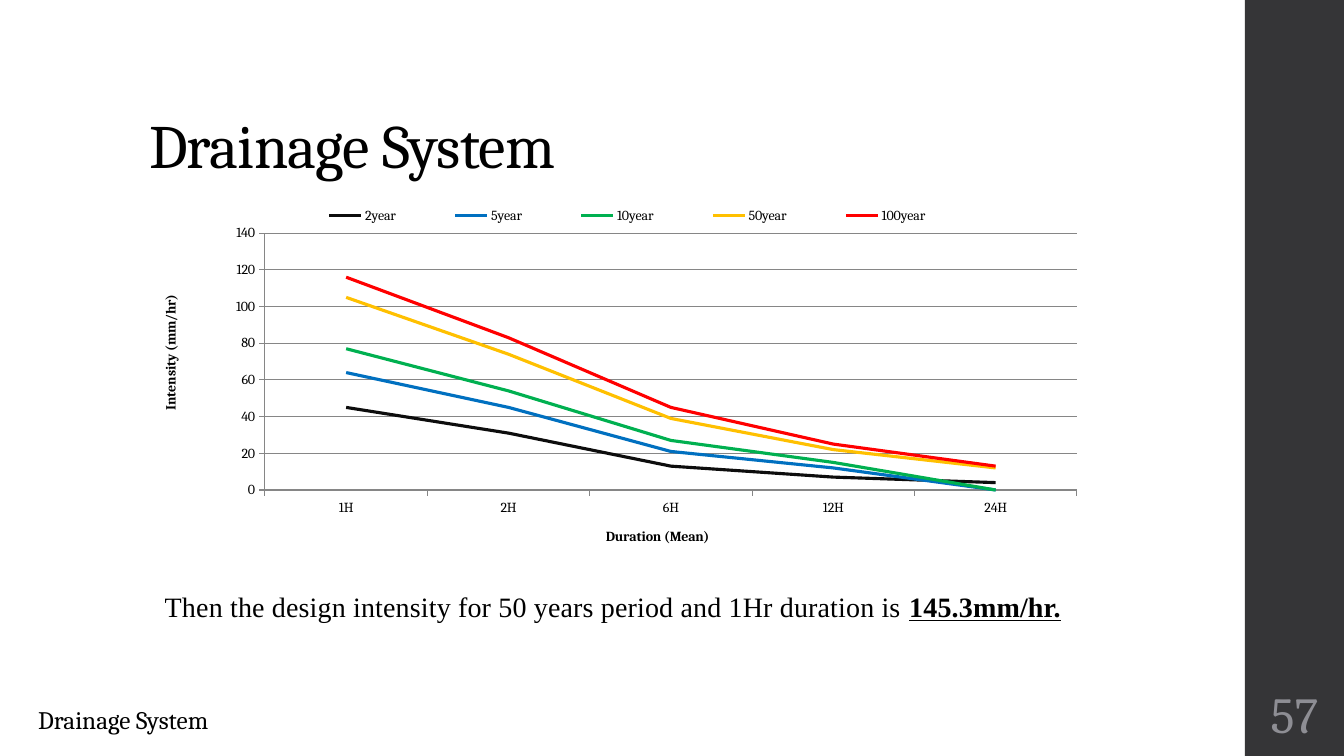
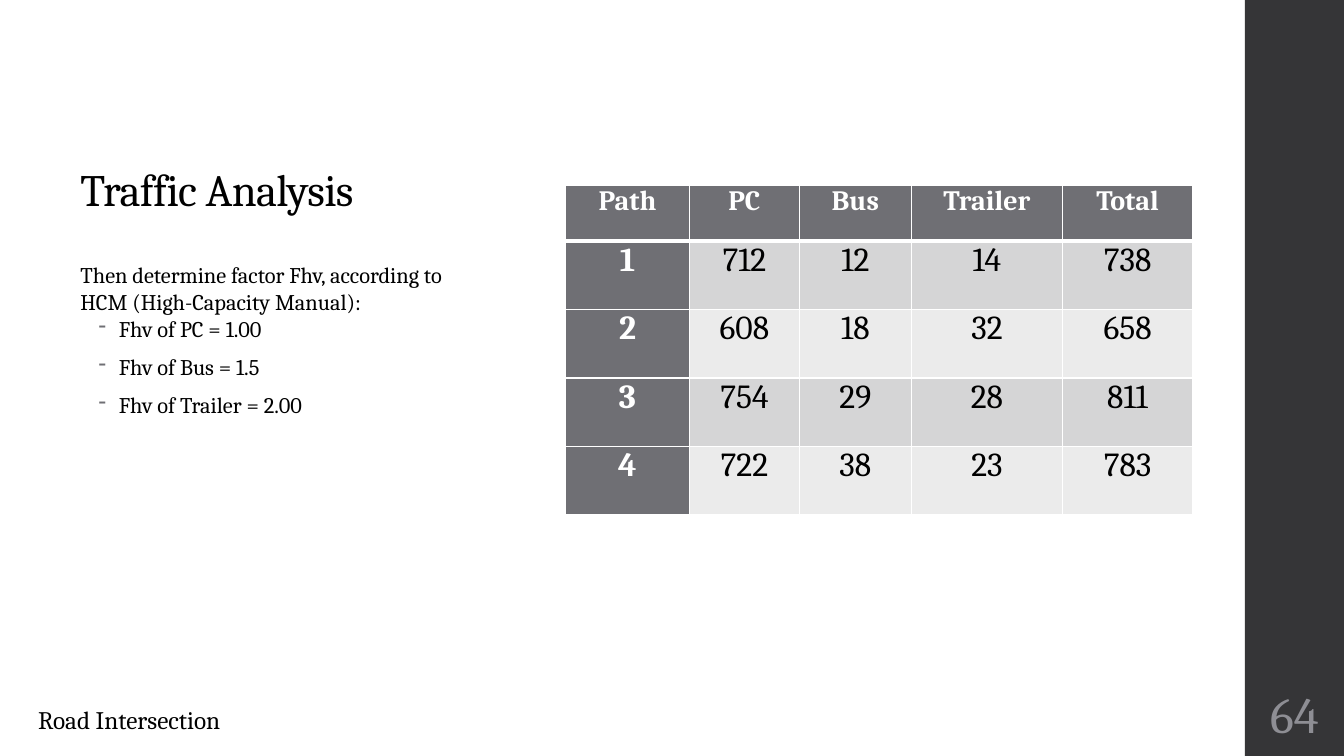
import pptx
import pptx.chart.data
import pptx.dml.color
import pptx.enum.chart
import pptx.enum.shapes
import pptx.enum.text
import pptx.oxml
import pptx.oxml.ns
import pptx.util
from dataclasses import dataclass

Pt = pptx.util.Pt
Inches = pptx.util.Inches
Align = pptx.enum.text.PP_ALIGN
Anchor = pptx.enum.text.MSO_ANCHOR
qn = pptx.oxml.ns.qn

SLIDE_WIDTH = Inches(13.333)
SLIDE_HEIGHT = Inches(7.5)


@dataclass(frozen=True)
class Theme:
    font: str = "Cambria"
    statement_font: str = "Times New Roman"
    text: str = "000000"
    white: str = "FFFFFF"
    band: str = "353537"
    number: str = "8E8E94"
    accent: str = "6F6F74"
    stripes: tuple = ("D5D5D6", "EBEBEB")
    axis: str = "868686"
    series: tuple = ("0D0D0D", "0070C0", "00B050", "FFC000", "FF0000")
    title_size: int = 44
    small_title_size: int = 32
    number_size: int = 36
    cell_size: int = 24
    statement_size: int = 20
    footer_size: int = 18
    list_size: int = 16
    chart_size: int = 10


THEME = Theme()

# Areas as left, top, width, height in percent of the slide
BAND = (92.62, 0, 7.38, 100)
NUMBER = (92.62, 90, 7.38, 8.67)
FOOTER = (2.1, 92.13, 27.08, 6)
WIDE_TITLE = (10.35, 5.33, 79.5, 19.33)
CHART = (8.93, 25.73, 71.92, 46.93)
STATEMENT = (10.35, 77.6, 70.5, 12.53)
SIDE_TITLE = (5.25, 9.33, 30.3, 19.87)
SIDE_LIST = (5.25, 33.87, 30.3, 56.27)
TABLE = (42.08, 24.53)
TABLE_COLUMNS = (9.22, 8.18, 8.33, 11.25, 9.68)
HEADER_ROW, BODY_ROW = 7.33, 9.07


def across(share):
    return round(SLIDE_WIDTH * share / 100)


def down(share):
    return round(SLIDE_HEIGHT * share / 100)


def place(area):
    left, top, width, height = area
    return across(left), down(top), across(width), down(height)


def rgb(value):
    return pptx.dml.color.RGBColor.from_string(value)


def style(font, size, color=THEME.text, name=THEME.font, bold=False):
    font.size = Pt(size)
    font.name = name
    font.bold = bold
    font.color.rgb = rgb(color)


def track(run, points):
    run._r.get_or_add_rPr().set("spc", str(round(points * 100)))


# Text elements
def add_text(slide, area, text, size, color=THEME.text, anchor=Anchor.TOP,
             name=THEME.font):
    frame = slide.shapes.add_textbox(*place(area)).text_frame
    frame.word_wrap = True
    frame.vertical_anchor = anchor
    frame.text = text
    for paragraph in frame.paragraphs:
        for run in paragraph.runs:
            style(run.font, size, color, name)
    return frame


def add_title(slide, area, text, size):
    paragraph = add_text(slide, area, text, size, anchor=Anchor.BOTTOM).paragraphs[0]
    paragraph.line_spacing = 0.9
    track(paragraph.runs[0], -0.5)


def add_statement(slide, text, result):
    frame = add_text(slide, STATEMENT, text, THEME.statement_size,
                     name=THEME.statement_font)
    paragraph = frame.paragraphs[0]
    paragraph.alignment = Align.CENTER
    paragraph.line_spacing = 0.95
    run = paragraph.add_run()
    run.text = result
    style(run.font, THEME.statement_size, name=THEME.statement_font, bold=True)
    run.font.underline = True
    for part in paragraph.runs:
        track(part, 0.1)


def add_bullet(paragraph):
    properties = paragraph._p.get_or_add_pPr()
    properties.set("marL", str(Inches(0.38)))
    properties.set("indent", str(-Inches(0.2)))
    color = pptx.oxml.parse_xml(
        f'<a:buClr {pptx.oxml.ns.nsdecls("a")}><a:srgbClr val="{THEME.accent}"/></a:buClr>')
    properties.append(color)
    mark = properties.makeelement(qn("a:buChar"), {"char": "-"})
    properties.append(mark)
    paragraph.space_after = Pt(8)


def add_list(slide, intro, items):
    frame = add_text(slide, SIDE_LIST, "\n".join([intro, *items]), THEME.list_size)
    for paragraph in frame.paragraphs[1:]:
        add_bullet(paragraph)


# Band, page number and footer
def add_page(presentation, number, footer):
    slide = presentation.slides.add_slide(presentation.slide_layouts[6])
    band = slide.shapes.add_shape(
        pptx.enum.shapes.MSO_SHAPE.RECTANGLE, *place(BAND))
    band.shadow.inherit = False
    band.fill.solid()
    band.fill.fore_color.rgb = rgb(THEME.band)
    band.line.fill.background()
    frame = add_text(slide, NUMBER, str(number), THEME.number_size,
                     THEME.number, Anchor.MIDDLE)
    frame.margin_left = frame.margin_right = Inches(0.05)
    frame.paragraphs[0].alignment = Align.CENTER
    add_text(slide, FOOTER, footer, THEME.footer_size, anchor=Anchor.MIDDLE)
    return slide


# Chart
def set_layout(element, after=None, target=None, **shares):
    """Place a chart part by shares of the chart area."""
    for old in element.findall(qn("c:layout")):
        element.remove(old)
    layout = element.makeelement(qn("c:layout"), {})
    manual = layout.makeelement(qn("c:manualLayout"), {})
    layout.append(manual)
    settings = {"layoutTarget": target} if target else {}
    settings.update(xMode="edge", yMode="edge", **shares)
    for tag, value in settings.items():
        manual.append(manual.makeelement(qn(f"c:{tag}"), {"val": str(value)}))
    if after:
        element.find(qn(after)).addnext(layout)
    else:
        element.insert(0, layout)


def style_axis(axis, title, x, y):
    frame = axis.axis_title.text_frame
    frame.text = title
    style(frame.paragraphs[0].runs[0].font, THEME.chart_size, bold=True)
    set_layout(axis.axis_title._element, after="c:tx", x=x, y=y)
    axis.major_tick_mark = pptx.enum.chart.XL_TICK_MARK.OUTSIDE
    axis.minor_tick_mark = pptx.enum.chart.XL_TICK_MARK.NONE
    axis.format.line.color.rgb = rgb(THEME.axis)
    style(axis.tick_labels.font, THEME.chart_size)


def add_line_chart(slide, categories, series):
    data = pptx.chart.data.CategoryChartData()
    data.categories = categories
    for name, values in series.items():
        data.add_series(name, values)
    chart = slide.shapes.add_chart(
        pptx.enum.chart.XL_CHART_TYPE.LINE, *place(CHART), data).chart
    style(chart.font, THEME.chart_size)
    chart.has_title = False
    chart.plots[0].vary_by_categories = False
    for line, color in zip(chart.plots[0].series, THEME.series):
        line.smooth = False
        line.marker.style = pptx.enum.chart.XL_MARKER_STYLE.NONE
        line.format.line.color.rgb = rgb(color)
        line.format.line.width = Pt(2.25)

    style_axis(chart.category_axis, "Duration (Mean)", 0.5, 0.94)
    value_axis = chart.value_axis
    style_axis(value_axis, "Intensity (mm/hr)", 0.04, 0.28)
    value_axis.minimum_scale = 0
    value_axis.maximum_scale = 140
    value_axis.major_unit = 20
    value_axis.has_major_gridlines = True
    value_axis.major_gridlines.format.line.color.rgb = rgb(THEME.axis)

    chart.has_legend = True
    legend = chart.legend
    legend.position = pptx.enum.chart.XL_LEGEND_POSITION.TOP
    legend.include_in_layout = False
    style(legend.font, THEME.chart_size)
    set_layout(legend._element, after="c:legendPos", x=0.16, y=0.03, w=0.73, h=0.06)
    plot_area = chart._chartSpace.find(qn("c:chart")).find(qn("c:plotArea"))
    set_layout(plot_area, target="inner", x=0.15, y=0.11, w=0.84, h=0.73)


# Table
def set_borders(cell, **widths):
    properties = cell._tc.get_or_add_tcPr()
    for position, side in enumerate("LRTB"):
        properties.insert(position, pptx.oxml.parse_xml(
            f'<a:ln{side} {pptx.oxml.ns.nsdecls("a")} w="{Pt(widths.get(side, 1))}">'
            f'<a:solidFill><a:srgbClr val="{THEME.white}"/></a:solidFill></a:ln{side}>'))


def fill_cell(cell, text, row, column):
    heading = row == 0 or column == 0
    cell.margin_left = cell.margin_right = Inches(0.18)
    cell.margin_top = cell.margin_bottom = 0
    cell.text = str(text)
    paragraph = cell.text_frame.paragraphs[0]
    paragraph.alignment = Align.CENTER
    style(paragraph.runs[0].font,
          THEME.statement_size if row == 0 else THEME.cell_size,
          THEME.white if heading else THEME.text, bold=heading)
    cell.fill.solid()
    cell.fill.fore_color.rgb = rgb(
        THEME.accent if heading else THEME.stripes[(row - 1) % 2])
    set_borders(cell, T=3 if row == 1 else 1, B=3 if row == 0 else 1)


def add_grid(slide, rows):
    heights = [HEADER_ROW] + [BODY_ROW] * (len(rows) - 1)
    area = (*TABLE, sum(TABLE_COLUMNS), sum(heights))
    table = slide.shapes.add_table(
        len(rows), len(TABLE_COLUMNS), *place(area)).table
    for column, width in zip(table.columns, TABLE_COLUMNS):
        column.width = across(width)
    for row, height in zip(table.rows, heights):
        row.height = down(height)
    for row, values in enumerate(rows):
        for column, value in enumerate(values):
            fill_cell(table.cell(row, column), value, row, column)


def main():
    presentation = pptx.Presentation()
    presentation.slide_width = SLIDE_WIDTH
    presentation.slide_height = SLIDE_HEIGHT

    # Rainfall intensity
    slide = add_page(presentation, 57, "Drainage System")
    add_title(slide, WIDE_TITLE, "Drainage System", THEME.title_size)
    add_line_chart(slide, ["1H", "2H", "6H", "12H", "24H"], {
        "2year": (45, 31, 13, 7, 4),
        "5year": (64, 45, 21, 12, 0),
        "10year": (77, 54, 27, 15, 0),
        "50year": (105, 74, 39, 22, 12),
        "100year": (116, 83, 45, 25, 13),
    })
    add_statement(
        slide, "Then the design intensity for 50 years period and 1Hr duration is ",
        "145.3mm/hr.")

    # Traffic counts
    slide = add_page(presentation, 64, "Road Intersection")
    add_title(slide, SIDE_TITLE, "Traffic Analysis", THEME.small_title_size)
    add_list(
        slide, "Then determine factor Fhv, according to HCM (High-Capacity Manual):",
        ["Fhv of PC = 1.00", "Fhv of Bus = 1.5", "Fhv of Trailer = 2.00"])
    add_grid(slide, [
        ("Path", "PC", "Bus", "Trailer", "Total"),
        (1, 712, 12, 14, 738),
        (2, 608, 18, 32, 658),
        (3, 754, 29, 28, 811),
        (4, 722, 38, 23, 783),
    ])

    presentation.save("out.pptx")


if __name__ == "__main__":
    main()
